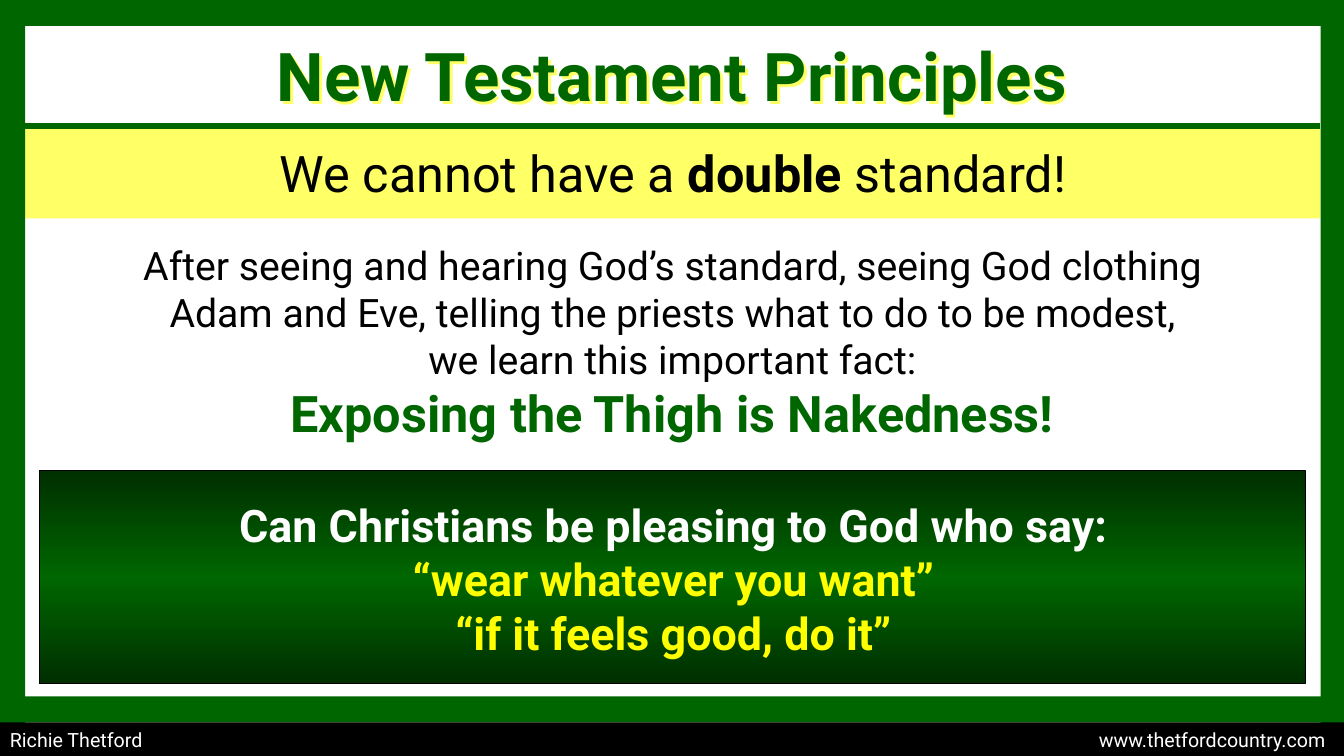
import pptx
import pptx.dml.color
import pptx.enum.shapes
import pptx.enum.text
import pptx.oxml
import pptx.oxml.ns
import pptx.util

COLORS = {
    "green": "006600",
    "dark_green": "002F00",
    "pale_yellow": "FFFF66",
    "yellow": "FFFF00",
    "black": "000000",
    "white": "FFFFFF",
}
COLUMNS, ROWS = 160, 90


def color(name):
    return pptx.dml.color.RGBColor.from_string(COLORS[name])


class SlideBuilder:
    font_name = "Roboto"
    frame_format = {
        "word_wrap": True,
        "auto_size": pptx.enum.text.MSO_AUTO_SIZE.NONE,
        "vertical_anchor": pptx.enum.text.MSO_ANCHOR.MIDDLE,
        "margin_left": pptx.util.Inches(0.1),
        "margin_right": pptx.util.Inches(0.1),
        "margin_top": pptx.util.Inches(0.05),
        "margin_bottom": pptx.util.Inches(0.05),
    }

    def __init__(self, presentation):
        self.column = presentation.slide_width / COLUMNS
        self.row = presentation.slide_height / ROWS
        self.slide = presentation.slides.add_slide(presentation.slide_layouts[5])

    def place(self, left, top, width, height):
        return (
            round(left * self.column),
            round(top * self.row),
            round(width * self.column),
            round(height * self.row),
        )

    def add_effects(self, shape, content=""):
        namespace = pptx.oxml.ns.nsdecls("a")
        effects = f"<a:effectLst {namespace}>{content}</a:effectLst>"
        shape._element.spPr.append(pptx.oxml.parse_xml(effects))

    def rectangle(self, area, fill):
        kind = pptx.enum.shapes.MSO_SHAPE.RECTANGLE
        shape = self.slide.shapes.add_shape(kind, *self.place(*area))
        shape.shadow.inherit = False
        shape.fill.solid()
        shape.fill.fore_color.rgb = color(fill)
        shape.line.fill.background()
        return shape

    def gradient_panel(self, area, edge, middle):
        shape = self.rectangle(area, middle)
        shape.fill.gradient()
        shape.fill.gradient_angle = 90
        stops = shape.fill._fill._gradFill.gsLst
        for stop in list(stops):
            stops.remove(stop)
        for position, name in ((0, edge), (50000, middle), (100000, edge)):
            stops.append(pptx.oxml.parse_xml(
                f'<a:gs {pptx.oxml.ns.nsdecls("a")} pos="{position}">'
                f'<a:srgbClr val="{COLORS[name]}"/></a:gs>'))
        shape.line.color.rgb = color("black")
        shape.line.width = pptx.util.Pt(0.75)

    def rule(self, left, right, top, name, width):
        start_x, y, length, _ = self.place(left, top, right - left, 0)
        kind = pptx.enum.shapes.MSO_CONNECTOR.STRAIGHT
        connector = self.slide.shapes.add_connector(kind, start_x, y, start_x + length, y)
        connector.line.color.rgb = color(name)
        connector.line.width = pptx.util.Pt(width)
        self.add_effects(connector)

    def fill_text(self, shape, paragraphs, alignment=pptx.enum.text.PP_ALIGN.CENTER):
        frame = shape.text_frame
        for attribute, value in self.frame_format.items():
            setattr(frame, attribute, value)
        for index, runs in enumerate(paragraphs):
            paragraph = frame.add_paragraph() if index else frame.paragraphs[0]
            paragraph.alignment = alignment
            for text, size, name, bold in runs:
                for line_index, line in enumerate(text.split("\n")):
                    if line_index:
                        paragraph.add_line_break()
                    run = paragraph.add_run()
                    run.text = line
                    font_format = {
                        "name": self.font_name,
                        "size": pptx.util.Pt(size),
                        "bold": bold,
                    }
                    for attribute, value in font_format.items():
                        setattr(run.font, attribute, value)
                    run.font.color.rgb = color(name)

    def text(self, area, paragraphs):
        self.fill_text(self.slide.shapes.add_textbox(*self.place(*area)), paragraphs)

    def title(self, area, text):
        shape = self.slide.shapes.title
        for attribute, value in zip(("left", "top", "width", "height"), self.place(*area)):
            setattr(shape, attribute, value)
        shape.fill.background()
        self.add_effects(
            shape,
            '<a:outerShdw dist="35921" dir="2700000" algn="ctr" rotWithShape="0">'
            f'<a:srgbClr val="{COLORS["pale_yellow"]}"/></a:outerShdw>')
        self.fill_text(shape, [[(text, 48, "green", True)]])

    def footer(self, area, left_text, right_text):
        shape = self.rectangle(area, "black")
        runs = [(f"{left_text}\t{right_text}", 14, "white", False)]
        self.fill_text(shape, [runs], pptx.enum.text.PP_ALIGN.LEFT)
        tab = pptx.util.Inches(13.05)
        properties = shape.text_frame.paragraphs[0]._p.get_or_add_pPr()
        properties.append(pptx.oxml.parse_xml(
            f'<a:tabLst {pptx.oxml.ns.nsdecls("a")}><a:tab pos="{tab}" algn="r"/></a:tabLst>'))


def main():
    presentation = pptx.Presentation()
    presentation.slide_width = pptx.util.Inches(13.33)
    presentation.slide_height = pptx.util.Inches(7.5)
    builder = SlideBuilder(presentation)

    builder.title((25, 3.4, 110, 11), "New Testament Principles")
    builder.rectangle((3, 15, 154.2, 11), "pale_yellow")
    builder.gradient_panel((4.7, 56, 150.7, 25.4), "dark_green", "green")
    builder.text((6.7, 58.6, 147, 20.6), [
        [("Can Christians be pleasing to God who say:", 32, "white", True)],
        [("“wear whatever you want”\n“if it feels good, do it”", 32, "yellow", True)],
    ])
    builder.text((3, 16.3, 154.2, 8.5), [[
        ("We cannot have a ", 36, "black", False),
        ("double", 36, "black", True),
        (" standard!", 36, "black", False),
    ]])
    builder.text((4.7, 28, 150.7, 25.4), [
        [("After seeing and hearing God’s standard, seeing God clothing\n"
          "Adam and Eve, telling the priests what to do to be modest,\n"
          "we learn this important fact:", 28, "black", False)],
        [("Exposing the Thigh is Nakedness!", 36, "green", True)],
    ])

    frame_bars = (
        (0, 0, 3, ROWS),
        (157.2, 0, 3, ROWS),
        (3, 0, 155.3, 3.1),
        (1.5, 82.9, 156.8, 3.1),
    )
    for bar in frame_bars:
        builder.rectangle(bar, "green")
    builder.footer((0, 86, COLUMNS, 4), "Richie Thetford", "www.thetfordcountry.com")
    builder.rule(2.2, 157.2, 15, "green", 4.5)
    presentation.save("out.pptx")


if __name__ == "__main__":
    main()
